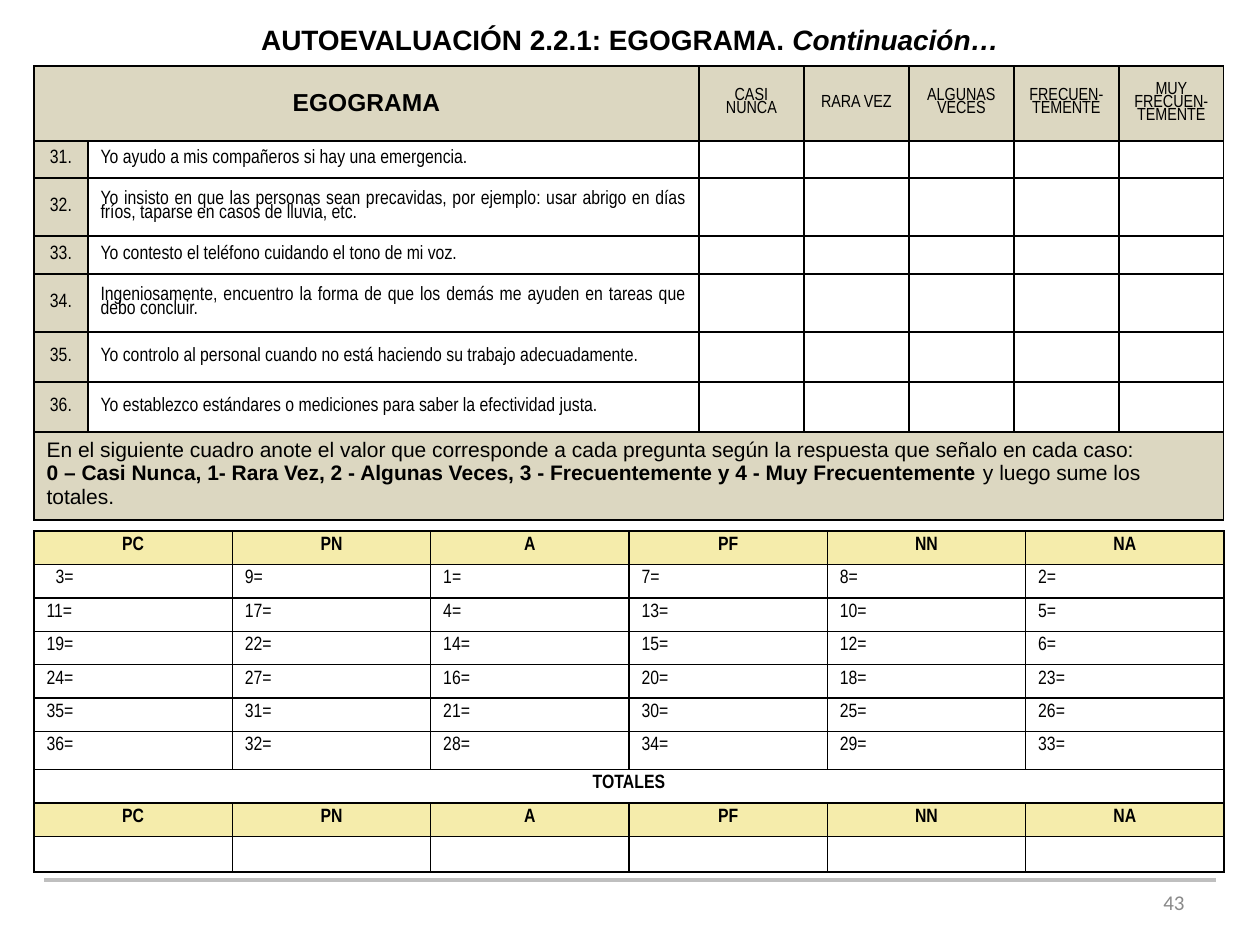
import lxml.etree
import pptx
import pptx.dml.color
import pptx.enum.shapes
import pptx.enum.text
import pptx.oxml.ns
import pptx.util

PX = 914400 / 126
COLORS = {"black": "000000", "white": "FFFFFF", "sand": "DCD7C1",
          "cream": "F5ECAB", "rule": "BFBFBF", "number": "898989"}
ALIGN = pptx.enum.text.PP_ALIGN
ANCHOR = pptx.enum.text.MSO_ANCHOR
qn = pptx.oxml.ns.qn

SCALE = ["CASI NUNCA", "RARA VEZ", "ALGUNAS VECES", "FRECUEN-TEMENTE",
         "MUY FRECUEN-TEMENTE"]
STATEMENTS = [
    "Yo ayudo a mis compañeros si hay una emergencia.",
    "Yo insisto en que las personas sean precavidas, por ejemplo: usar abrigo "
    "en días fríos, taparse en casos de lluvia, etc.",
    "Yo contesto el teléfono cuidando el tono de mi voz.",
    "Ingeniosamente, encuentro la forma de que los demás me ayuden en tareas "
    "que debo concluir.",
    "Yo controlo al personal cuando no está haciendo su trabajo adecuadamente.",
    "Yo establezco estándares o mediciones para saber la efectividad justa.",
]
FIRST_NUMBER = 31
INSTRUCTIONS = [
    ("En el siguiente cuadro anote el valor que corresponde a cada pregunta "
     "según la respuesta que señalo en cada caso:\v", False),
    ("0 – Casi Nunca, 1- Rara Vez, 2 - Algunas Veces, 3 - Frecuentemente y "
     "4 - Muy Frecuentemente ", True),
    ("y luego sume los totales.", False),
]
STATES = {
    "PC": [3, 11, 19, 24, 35, 36],
    "PN": [9, 17, 22, 27, 31, 32],
    "A": [1, 4, 14, 16, 21, 28],
    "PF": [7, 13, 15, 20, 30, 34],
    "NN": [8, 10, 12, 18, 25, 29],
    "NA": [2, 5, 6, 23, 26, 33],
}


def px(n):
    return pptx.util.Emu(round(n * PX))


def rgb(name):
    return pptx.dml.color.RGBColor.from_string(COLORS[name])


def style(p, size, font="Arial", color="black", bold=False, align=ALIGN.LEFT,
          spacing=None):
    p.alignment = align
    p.line_spacing = spacing
    p.space_before = pptx.util.Pt(0)
    p.font.size = pptx.util.Pt(size)
    p.font.name = font
    p.font.bold = bold
    p.font.color.rgb = rgb(color)


def add_border(cell):
    tcPr = cell._tc.get_or_add_tcPr()
    for side in ("lnL", "lnR", "lnT", "lnB"):
        ln = lxml.etree.SubElement(tcPr, qn("a:" + side), w="12700")
        fill = lxml.etree.SubElement(ln, qn("a:solidFill"))
        lxml.etree.SubElement(fill, qn("a:srgbClr"), val=COLORS["black"])


def add_grid(s, x, y, cols, rows):
    """Add a plain table with black borders and white cells."""
    frame = s.shapes.add_table(len(rows), len(cols), px(x), px(y),
                               px(sum(cols)), px(sum(rows)))
    table = frame.table
    table.first_row = table.horz_banding = False
    for column, width in zip(table.columns, cols):
        column.width = px(width)
    for row, height in zip(table.rows, rows):
        row.height = px(height)
    for cell in table.iter_cells():
        add_border(cell)
        paint(cell, "white")
        # Keeps an empty cell from growing its row
        end = lxml.etree.SubElement(cell.text_frame.paragraphs[0]._p,
                                    qn("a:endParaRPr"))
        end.set("sz", "1100")
    return table


def paint(cell, color):
    cell.fill.solid()
    cell.fill.fore_color.rgb = rgb(color)


def write(cell, text, size=11, anchor=ANCHOR.MIDDLE, **kw):
    cell.vertical_anchor = anchor
    p = cell.text_frame.paragraphs[0]
    p.text = text
    style(p, size, **kw)
    return p


def add_title(s, x, y, w, h):
    title = s.shapes.title
    title.left, title.top, title.width, title.height = map(px, (x, y, w, h))
    tf = title.text_frame
    tf.vertical_anchor = ANCHOR.TOP
    tf.auto_size = pptx.enum.text.MSO_AUTO_SIZE.NONE
    p = tf.paragraphs[0]
    p.add_run().text = "AUTOEVALUACIÓN 2.2.1: EGOGRAMA. "
    r = p.add_run()
    r.text = "Continuación…"
    r.font.italic = True
    style(p, 16, bold=True, align=ALIGN.CENTER)


def add_questionnaire(s, x, y, w):
    number_w, scale_w = 54, 105
    statement_w = w - number_w - scale_w * len(SCALE)
    table = add_grid(s, x, y, [number_w, statement_w] + [scale_w] * len(SCALE),
                     [75, 37, 58, 38, 58, 50, 50, 83])
    narrow = {"font": "Arial Narrow", "spacing": 0.8}

    table.cell(0, 0).merge(table.cell(0, 1))
    write(table.cell(0, 0), "EGOGRAMA", 14, bold=True, align=ALIGN.CENTER)
    for c, label in enumerate(SCALE, 2):
        write(table.cell(0, c), label, 10, align=ALIGN.CENTER, **narrow)
    for c in range(len(table.columns)):
        paint(table.cell(0, c), "sand")

    for i, statement in enumerate(STATEMENTS):
        number, text = table.cell(i + 1, 0), table.cell(i + 1, 1)
        paint(number, "sand")
        write(number, f"{FIRST_NUMBER + i}.", align=ALIGN.CENTER, **narrow)
        write(text, statement, align=ALIGN.JUSTIFY, **narrow)

    last = len(STATEMENTS) + 1
    note = table.cell(last, 0)
    note.merge(table.cell(last, len(table.columns) - 1))
    paint(note, "sand")
    p = write(note, "", 12, anchor=ANCHOR.TOP)
    for text, bold in INSTRUCTIONS:
        if text.endswith("\v"):
            p.add_run().text = text.rstrip("\v")
            p.add_line_break()
        else:
            r = p.add_run()
            r.text = text
            r.font.bold = bold


def add_score_sheet(s, x, y, w, h):
    tall = 38
    row_h = (h - tall) / 9
    table = add_grid(s, x, y, [w / len(STATES)] * len(STATES),
                     [row_h] * 6 + [tall] + [row_h] * 3)
    narrow = {"font": "Arial Narrow", "spacing": 0.9, "anchor": ANCHOR.TOP}
    heading = dict(narrow, bold=True, align=ALIGN.CENTER)

    for c, (state, questions) in enumerate(STATES.items()):
        for row in (0, 8):
            paint(table.cell(row, c), "cream")
            write(table.cell(row, c), state, **heading)
        for row, question in enumerate(questions, 1):
            p = write(table.cell(row, c), f"{question}=", **narrow)
            if question == 3:
                p._p.get_or_add_pPr().set("marL", str(px(9)))

    table.cell(7, 0).merge(table.cell(7, len(STATES) - 1))
    write(table.cell(7, 0), "TOTALES", **heading)


def add_footer(s, x, y, w):
    line = s.shapes.add_connector(pptx.enum.shapes.MSO_CONNECTOR.STRAIGHT,
                                  px(x), px(y), px(x + w), px(y))
    line.line.color.rgb = rgb("rule")
    line.line.width = pptx.util.Pt(2)
    lxml.etree.SubElement(line._element.spPr, qn("a:effectLst"))

    box_w = 294
    sp = s.shapes.add_textbox(px(x + w - 19 - box_w), px(y - 3), px(box_w), px(50))
    tf = sp.text_frame
    tf.word_wrap = True
    tf.vertical_anchor = ANCHOR.MIDDLE
    tf.text = "43"
    style(tf.paragraphs[0], 12, "Calibri", "number", align=ALIGN.RIGHT)


def main():
    prs = pptx.Presentation()
    prs.slide_width, prs.slide_height = px(1260), px(945)
    s = prs.slides.add_slide(prs.slide_layouts[5])
    add_footer(s, 44, 880, 1172)
    add_questionnaire(s, 34, 66, 1190)
    add_score_sheet(s, 34, 531, 1190, 338)
    add_title(s, 59, 16, 1142, 47)
    prs.save("out.pptx")


if __name__ == "__main__":
    main()
